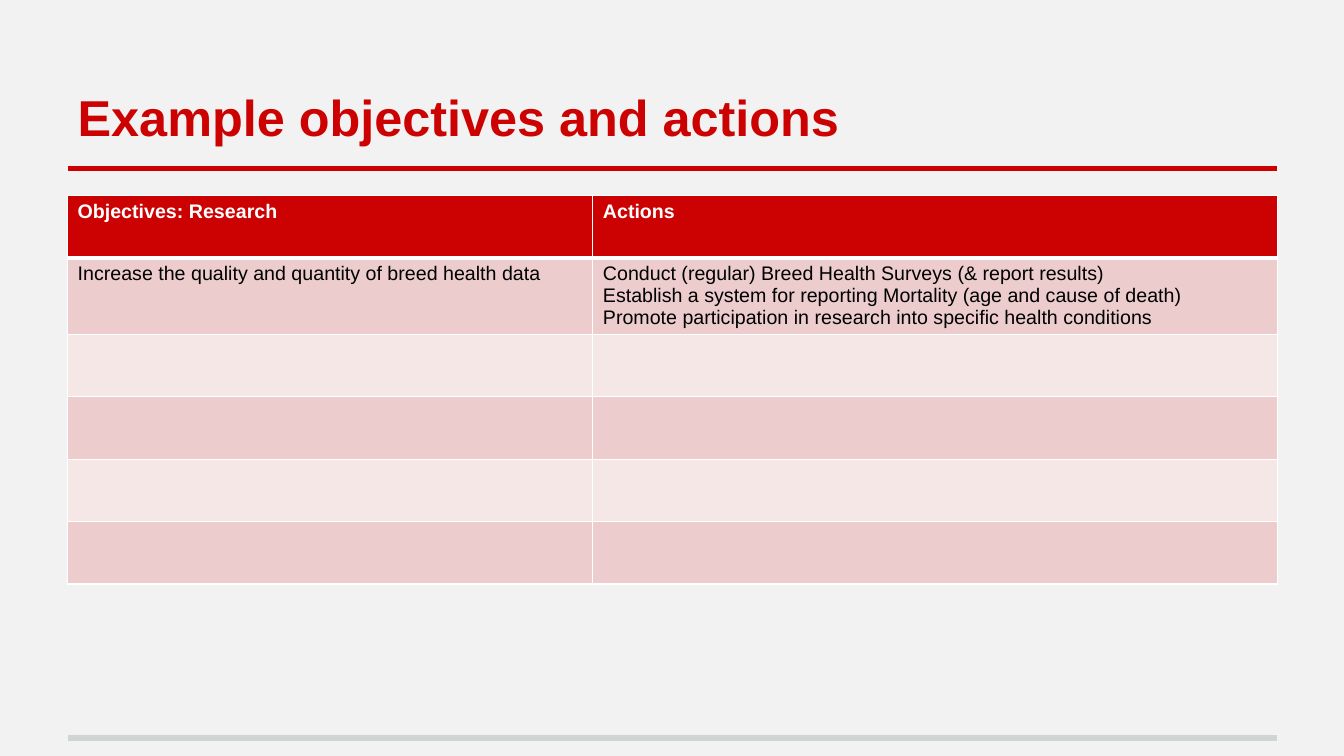
from lxml.etree import SubElement
from pptx import Presentation
from pptx.dml.color import RGBColor
from pptx.enum.shapes import MSO_CONNECTOR as Connector
from pptx.enum.text import MSO_ANCHOR as Anchor, PP_ALIGN as Align
from pptx.oxml.ns import qn
from pptx.util import Inches, Pt

RED, WHITE, BLACK = "CC0202", "FFFFFF", "000000"
GREY, BACKGROUND = "CFD4D4", "F2F2F2"
BANDS = ["ECCCCC", "F6E7E7"]
LEFT, WIDTH = 0.67, 12
ROW_COUNT, ROW_HEIGHT = 6, 0.62
COLUMN_WIDTHS = [5.21, 6.79]
HEADINGS = ["Objectives: Research", "Actions"]
OBJECTIVE = "Increase the quality and quantity of breed health data"
ACTIONS = [
    "Conduct (regular) Breed Health Surveys (& report results)",
    "Establish a system for reporting Mortality (age and cause of death)",
    "Promote participation in research into specific health conditions",
]
TITLE_FORMAT = {"name": "Arial", "size": Pt(36), "bold": True}
HEADING_FORMAT = {"name": "Arial", "size": Pt(14), "bold": True}
BODY_FORMAT = {"name": "Arial", "size": Pt(14), "bold": False}


def paint(color_format, color):
    color_format.rgb = RGBColor.from_string(color)


def fill_solid(fill, color):
    fill.solid()
    paint(fill.fore_color, color)


def apply_format(target, values):
    for attribute, value in values.items():
        setattr(target, attribute, value)


def write_text(frame, text, font_format, color, align=Align.LEFT):
    frame.text = text
    for paragraph in frame.paragraphs:
        paragraph.alignment = align
        for run in paragraph.runs:
            apply_format(run.font, font_format)
            paint(run.font.color, color)


def add_title(slide, text):
    title = slide.shapes.title
    apply_format(title, {"left": Inches(LEFT), "top": Inches(0.3),
                         "width": Inches(WIDTH), "height": Inches(1.25)})
    frame = title.text_frame
    margins = dict.fromkeys(
        ["margin_left", "margin_top", "margin_right", "margin_bottom"], Inches(0.1))
    apply_format(frame, {**margins, "vertical_anchor": Anchor.BOTTOM, "word_wrap": True})
    write_text(frame, text, TITLE_FORMAT, RED)


def add_rule(slide, y, color):
    rule = slide.shapes.add_connector(
        Connector.STRAIGHT, Inches(LEFT), Inches(y), Inches(LEFT + WIDTH), Inches(y))
    rule.line.width = Pt(4)
    paint(rule.line.color, color)
    SubElement(rule._element.spPr, qn("a:effectLst"))


def add_borders(cell, widths):
    properties = cell._tc.get_or_add_tcPr()
    for side, width in widths.items():
        border = SubElement(properties, qn(f"a:ln{side}"), w=str(Pt(width)))
        solid = SubElement(border, qn("a:solidFill"))
        SubElement(solid, qn("a:srgbClr"), val=WHITE)


def add_objectives_table(slide):
    table = slide.shapes.add_table(
        ROW_COUNT, len(COLUMN_WIDTHS), Inches(LEFT), Inches(1.94),
        Inches(WIDTH), Inches(ROW_COUNT * ROW_HEIGHT)).table
    for column, width in zip(table.columns, COLUMN_WIDTHS):
        column.width = Inches(width)
    for index, row in enumerate(table.rows):
        row.height = Inches(ROW_HEIGHT)
        for cell in row.cells:
            add_borders(cell, {"L": 1, "R": 1, "T": 3 if index == 1 else 1,
                               "B": 3 if index == 0 else 1})
            fill_solid(cell.fill, BANDS[(index - 1) % 2] if index else RED)
    for column, heading in enumerate(HEADINGS):
        write_text(table.cell(0, column).text_frame, heading, HEADING_FORMAT, WHITE)
    for column, text in enumerate([OBJECTIVE, "\n".join(ACTIONS)]):
        write_text(table.cell(1, column).text_frame, text, BODY_FORMAT, BLACK)


def main():
    deck = Presentation()
    apply_format(deck, {"slide_width": Inches(13.33), "slide_height": Inches(7.5)})
    slide = deck.slides.add_slide(deck.slide_layouts.get_by_name("Title Only"))
    fill_solid(slide.background.fill, BACKGROUND)
    add_rule(slide, 7.32, GREY)
    add_rule(slide, 1.67, RED)
    add_title(slide, "Example objectives and actions")
    add_objectives_table(slide)
    deck.save("out.pptx")


if __name__ == "__main__":
    main()
